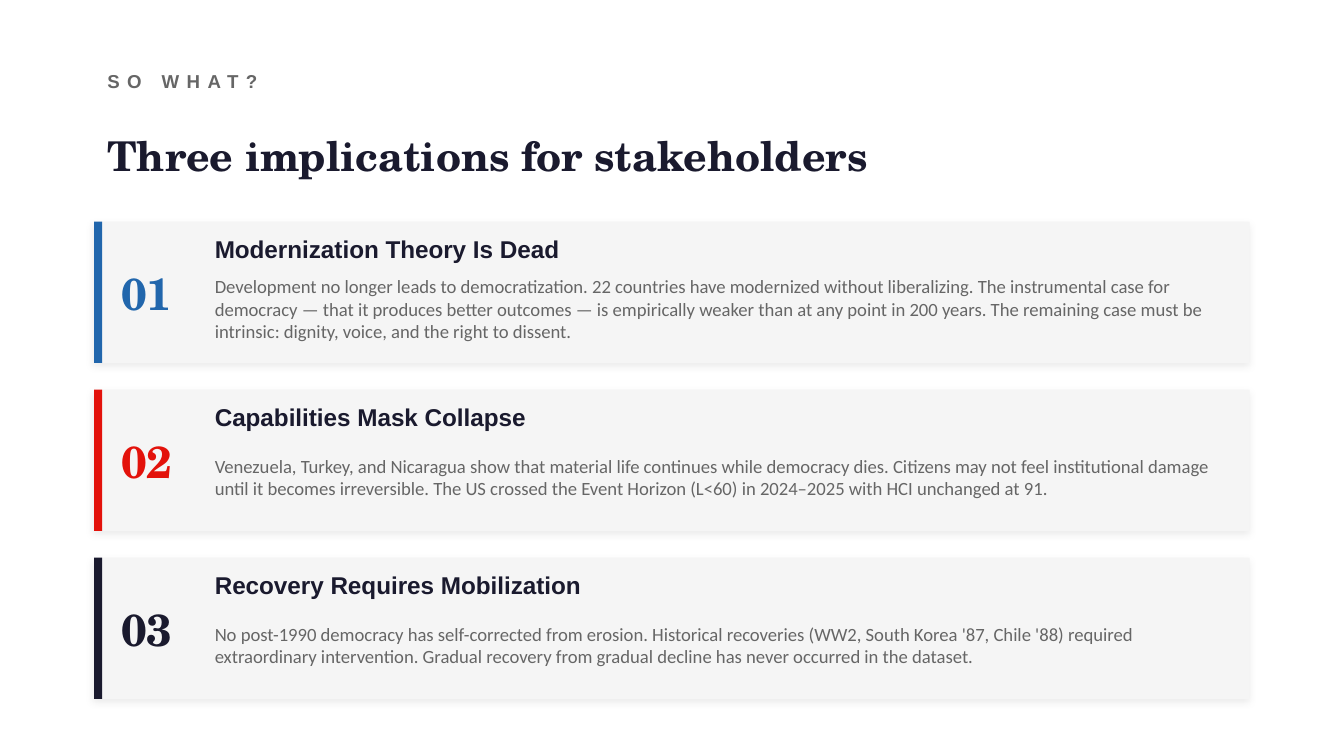
from lxml.etree import SubElement
from pptx import Presentation
from pptx.dml.color import RGBColor
from pptx.enum.shapes import MSO_SHAPE
from pptx.enum.text import MSO_ANCHOR
from pptx.oxml.ns import qn
from pptx.util import Cm, Pt

NAVY = RGBColor(0x1A, 0x1A, 0x2E)
BLUE = RGBColor(0x21, 0x66, 0xAC)
RED = RGBColor(0xE3, 0x12, 0x0B)
GRAY = RGBColor(0x66, 0x66, 0x66)
PALE_GRAY = RGBColor(0xF5, 0xF5, 0xF5)

SERIF = "TeX Gyre Schola"
SANS = "Arial"
BODY = "Calibri"

MARGIN = 1.78
CARD_TOP = 4.19
CARD_WIDTH = 21.84
CARD_HEIGHT = 2.67
CARD_PITCH = 3.175
TEXT_LEFT = 4.06
TEXT_WIDTH = 19.05

IMPLICATIONS = [
    (BLUE, "Modernization Theory Is Dead",
     "Development no longer leads to democratization. 22 countries have modernized without "
     "liberalizing. The instrumental case for democracy — that it produces better outcomes — is "
     "empirically weaker than at any point in 200 years. The remaining case must be intrinsic: "
     "dignity, voice, and the right to dissent."),
    (RED, "Capabilities Mask Collapse",
     "Venezuela, Turkey, and Nicaragua show that material life continues while democracy dies. "
     "Citizens may not feel institutional damage until it becomes irreversible. The US crossed "
     "the Event Horizon (L<60) in 2024–2025 with HCI unchanged at 91."),
    (NAVY, "Recovery Requires Mobilization",
     "No post-1990 democracy has self-corrected from erosion. Historical recoveries (WW2, South "
     "Korea '87, Chile '88) required extraordinary intervention. Gradual recovery from gradual "
     "decline has never occurred in the dataset."),
]


def write_text(text_frame, text, *, size, font, color, bold=False, spacing=0):
    """Fill the frame with one run; spacing is the letter spacing in points."""
    run = text_frame.paragraphs[0].add_run()
    run.text = text
    run.font.size = Pt(size)
    run.font.name = font
    run.font.bold = bold
    run.font.color.rgb = color
    if spacing:
        run.font._element.set("spc", str(spacing * 100))


def add_soft_shadow(shape):
    effects = shape._element.spPr.find(qn("a:effectLst"))
    shadow = SubElement(effects, qn("a:outerShdw"), blurRad=str(Pt(4)), dist=str(Pt(1.5)),
                        dir=str(135 * 60000), algn="bl", rotWithShape="0")
    color = SubElement(shadow, qn("a:srgbClr"), val="000000")
    SubElement(color, qn("a:alpha"), val="8000")


class SlideBuilder:
    def __init__(self, slide):
        self.slide = slide

    def add_text(self, text, left, top, width, height, *, inset=True, **style):
        box = self.slide.shapes.add_textbox(Cm(left), Cm(top), Cm(width), Cm(height))
        frame = box.text_frame
        frame.word_wrap = True
        frame.vertical_anchor = MSO_ANCHOR.MIDDLE
        if not inset:
            frame.margin_left = frame.margin_right = 0
            frame.margin_top = frame.margin_bottom = 0
        write_text(frame, text, **style)

    def add_rectangle(self, left, top, width, height, color):
        shape = self.slide.shapes.add_shape(
            MSO_SHAPE.RECTANGLE, Cm(left), Cm(top), Cm(width), Cm(height))
        shape.fill.solid()
        shape.fill.fore_color.rgb = color
        shape.line.fill.background()
        shape.shadow.inherit = False
        return shape

    def add_card(self, number, top, accent, heading, body):
        add_soft_shadow(self.add_rectangle(MARGIN, top, CARD_WIDTH, CARD_HEIGHT, PALE_GRAY))
        self.add_rectangle(MARGIN, top, 0.15, CARD_HEIGHT, accent)
        self.add_text(f"{number:02}", 2.29, top, 1.52, CARD_HEIGHT, inset=False,
                      size=24, font=SERIF, color=accent, bold=True)
        self.add_text(heading, TEXT_LEFT, top + 0.13, TEXT_WIDTH, 0.76, inset=False,
                      size=13, font=SANS, color=NAVY, bold=True)
        self.add_text(body, TEXT_LEFT, top + 0.89, TEXT_WIDTH, 1.52, inset=False,
                      size=10, font=BODY, color=GRAY)


def main():
    presentation = Presentation()
    presentation.slide_width = Cm(25.4)
    presentation.slide_height = Cm(14.29)
    builder = SlideBuilder(presentation.slides.add_slide(presentation.slide_layouts[6]))

    builder.add_text("SO WHAT?", MARGIN, 1.02, 20.32, 1.02,
                     size=10, font=SANS, color=GRAY, bold=True, spacing=4)
    builder.add_text("Three implications for stakeholders", MARGIN, 2.29, 20.32, 1.27,
                     size=22, font=SERIF, color=NAVY, bold=True)
    for index, implication in enumerate(IMPLICATIONS):
        builder.add_card(index + 1, CARD_TOP + index * CARD_PITCH, *implication)

    presentation.save("out.pptx")


if __name__ == "__main__":
    main()
